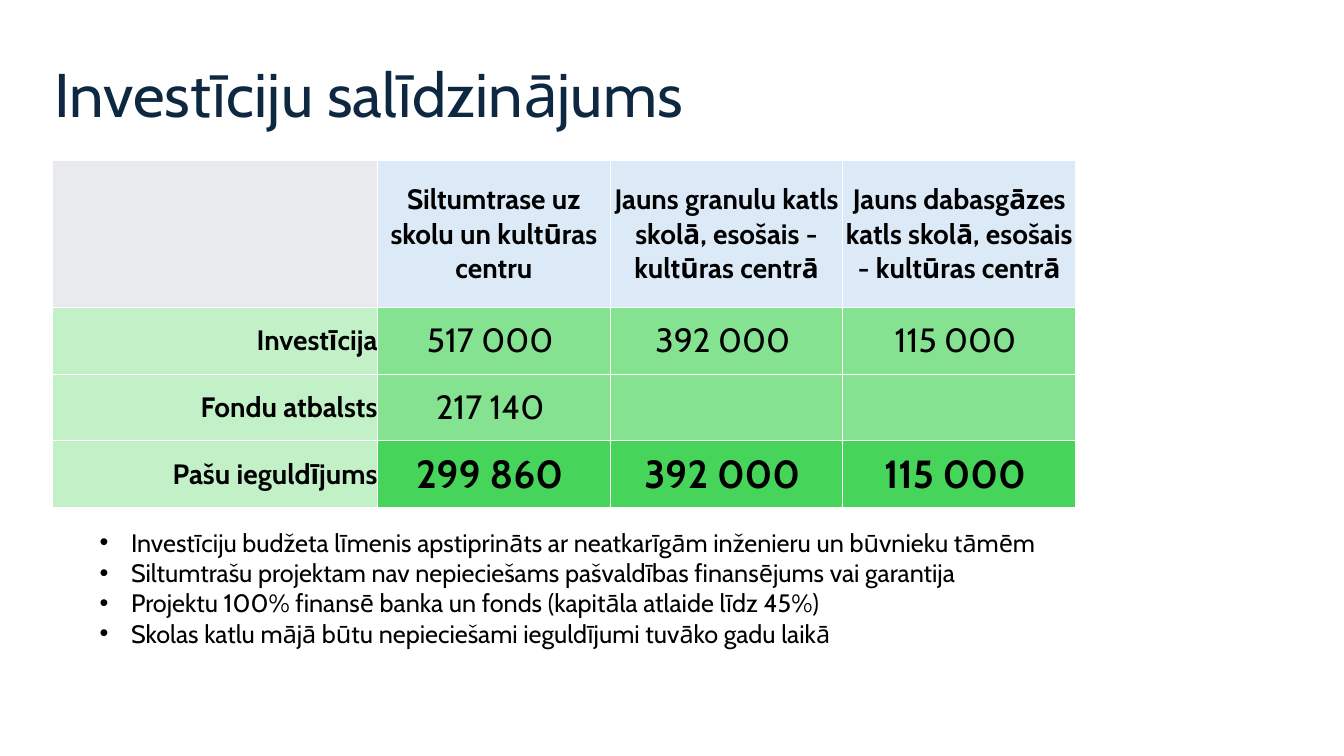
import pptx
import pptx.dml.color
import pptx.enum.text
import pptx.oxml
import pptx.oxml.ns
import pptx.util

Pt = pptx.util.Pt
ALIGN = pptx.enum.text.PP_ALIGN
ANCHOR = pptx.enum.text.MSO_ANCHOR

FONT = "Cabin"
COLORS = {
    "navy": "0E2841",
    "black": "000000",
    "white": "FFFFFF",
    "corner": "E8EAED",
    "header": "DCEAF7",
    "label": "C2F1C8",
    "value": "84E291",
    "total": "47D45A",
}


def element(xml):
    """Parse a fragment whose root is in the drawing namespace."""
    return pptx.oxml.parse_xml(xml.replace(" ", f" {pptx.oxml.ns.nsdecls('a')} ", 1))


class SlideBuilder:
    def __init__(self, presentation):
        self.slide = presentation.slides.add_slide(presentation.slide_layouts[6])

    def style(self, paragraph, size, color="black", bold=False):
        font = paragraph.font
        font.name, font.size, font.bold = FONT, Pt(size), bold
        font.color.rgb = pptx.dml.color.RGBColor.from_string(COLORS[color])

    def text(self, box, lines, size, color="black", spacing=None, bullet_indent=None):
        shape = self.slide.shapes.add_textbox(*map(Pt, box))
        frame = shape.text_frame
        frame.word_wrap = True
        frame.text = "\n".join(lines)
        for paragraph in frame.paragraphs:
            if bullet_indent:
                properties = paragraph._p.get_or_add_pPr()
                properties.set("marL", str(Pt(bullet_indent)))
                properties.set("indent", str(-Pt(bullet_indent)))
                properties.append(element('<a:buFont typeface="Arial"/>'))
                properties.append(element('<a:buChar char="•"/>'))
            if spacing:
                paragraph.line_spacing = spacing
            self.style(paragraph, size, color)

    def table(self, left, top, widths, heights):
        table = self.slide.shapes.add_table(
            len(heights), len(widths), Pt(left), Pt(top), Pt(sum(widths)), Pt(sum(heights))
        ).table
        table.first_row = table.horz_banding = False
        for column, width in zip(table.columns, widths):
            column.width = Pt(width)
        for row, height in zip(table.rows, heights):
            row.height = Pt(height)
        return table

    def cell(self, cell, text, fill, size, bold, alignment):
        properties = cell._tc.get_or_add_tcPr()
        for side in ("lnL", "lnR", "lnT", "lnB"):
            properties.append(element(
                f'<a:{side} w="{Pt(1)}"><a:solidFill>'
                f'<a:srgbClr val="{COLORS["white"]}"/></a:solidFill></a:{side}>'
            ))
        cell.fill.solid()
        cell.fill.fore_color.rgb = pptx.dml.color.RGBColor.from_string(COLORS[fill])
        cell.margin_left = cell.margin_right = cell.margin_top = cell.margin_bottom = 0
        cell.vertical_anchor = ANCHOR.MIDDLE
        cell.text = text
        paragraph = cell.text_frame.paragraphs[0]
        paragraph.alignment = alignment
        self.style(paragraph, size, bold=bold)


def main():
    presentation = pptx.Presentation()
    presentation.slide_width, presentation.slide_height = Pt(960), Pt(540)
    builder = SlideBuilder(presentation)

    # Title
    builder.text((32, 42.5, 828, 104), ["Investīciju salīdzinājums"], 44, "navy", spacing=0.9)

    # Investment table: (first cell fill, other cells fill, value size, bold, texts)
    rows = [
        ("corner", "header", 20, True, [
            "",
            "Siltumtrase uz skolu un kultūras centru",
            "Jauns granulu katls skolā, esošais - kultūras centrā",
            "Jauns dabasgāzes katls skolā, esošais - kultūras centrā",
        ]),
        ("label", "value", 24, False, ["Investīcija", "517 000 ", "392 000 ", "115 000 "]),
        ("label", "value", 24, False, ["Fondu atbalsts", "217 140 ", "", ""]),
        ("label", "total", 28, True, ["Pašu ieguldījums", "299 860 ", "392 000 ", "115 000 "]),
    ]
    table = builder.table(37.5, 114.7, [232.2] + [166.2] * 3, [105] + [47.6] * 3)
    for row, (label_fill, value_fill, size, bold, texts) in enumerate(rows):
        builder.cell(table.cell(row, 0), texts[0], label_fill, 20, True, ALIGN.RIGHT)
        for column, text in enumerate(texts[1:], 1):
            builder.cell(table.cell(row, column), text, value_fill, size, bold, ALIGN.CENTER)

    # Conclusions
    builder.text((64, 373, 796, 138), [
        "Investīciju budžeta līmenis apstiprināts ar neatkarīgām inženieru un būvnieku tāmēm",
        "Siltumtrašu projektam nav nepieciešams pašvaldības finansējums vai garantija",
        "Projektu 100% finansē banka un fonds (kapitāla atlaide līdz 45%)",
        "Skolas katlu mājā būtu nepieciešami ieguldījumi tuvāko gadu laikā",
    ], 18, bullet_indent=22.5)

    presentation.save("out.pptx")


if __name__ == "__main__":
    main()
